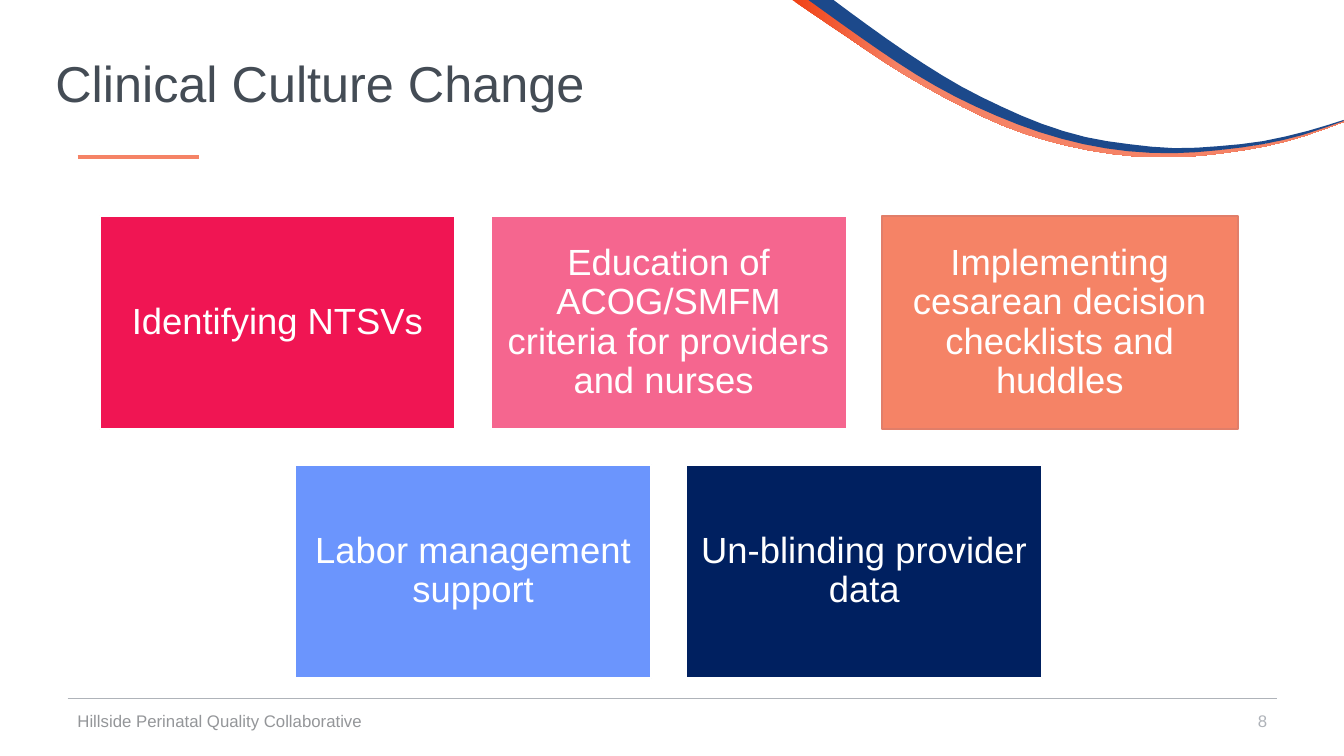
import pptx
import pptx.dml.color
import pptx.enum.shapes
import pptx.enum.text
import pptx.oxml
import pptx.util

Inches = pptx.util.Inches
Points = pptx.util.Pt
Align = pptx.enum.text.PP_ALIGN

COLORS = {
    "title": "444C55", "footer": "949699", "rule": "AFB3B9", "white": "FFFFFF",
    "flame": "F04115", "coral": "F58366", "coral edge": "E17E69", "blue": "1C498B",
    "crimson": "F01553", "pink": "F5668F", "sky": "6B95FD", "navy": "002060",
}
CARD_ROWS = [
    [("Identifying NTSVs", "crimson", "white"),
     ("Education of ACOG/SMFM criteria for providers and nurses ", "pink", "white"),
     ("Implementing cesarean decision checklists and huddles", "coral", "coral edge")],
    [("Labor management support", "sky", "white"),
     ("Un-blinding provider data", "navy", "white")],
]
CORAL_RIBBON = (
    [(7.86, 0), (8.41, 0.37), (8.78, 0.62), (9.16, 0.85), (9.55, 1.06), (9.96, 1.25),
     (10.37, 1.39), (10.8, 1.49), (11.24, 1.55), (11.69, 1.56), (12.13, 1.52),
     (12.56, 1.45), (12.94, 1.35), (13.33, 1.21)],
    [(13.33, 1.2), (12.99, 1.32), (12.56, 1.43), (12.12, 1.49), (11.68, 1.52),
     (11.25, 1.5), (10.81, 1.44), (10.39, 1.33), (9.58, 0.99), (8.82, 0.54), (8.05, 0)],
)
BLUE_RIBBON = (
    [(8.02, 0), (8.34, 0.23), (8.71, 0.49), (9.09, 0.74), (9.48, 0.96), (9.89, 1.15),
     (10.31, 1.31), (10.75, 1.43), (11.19, 1.5), (11.64, 1.52), (12.09, 1.49),
     (12.53, 1.43), (12.92, 1.34), (13.33, 1.2)],
    [(13.33, 1.19), (12.97, 1.3), (12.53, 1.4), (12.09, 1.45), (11.65, 1.47),
     (11.2, 1.43), (10.77, 1.36), (10.34, 1.23), (9.94, 1.06), (9.54, 0.86),
     (9.16, 0.63), (8.79, 0.38), (8.43, 0.12), (8.27, 0)],
)


def color(name):
    """Return the named colour."""
    return pptx.dml.color.RGBColor.from_string(COLORS[name])


def write_text(shape, text, size, ink, align=Align.LEFT, spacing=1.0, margin=0.1):
    """Write one vertically centred paragraph into a shape."""
    frame = shape.text_frame
    frame.word_wrap = True
    frame.vertical_anchor = pptx.enum.text.MSO_ANCHOR.MIDDLE
    frame.margin_left = frame.margin_right = Inches(margin)
    para = frame.paragraphs[0]
    para.alignment = align
    para.line_spacing = spacing
    span = para.add_run()
    span.text = text
    span.font.name = "Arial"
    span.font.size = Points(size)
    span.font.color.rgb = color(ink)


def add_label(page, box, text, size, ink, **text_format):
    """Add a text box filling the given box."""
    label = page.shapes.add_textbox(*map(Inches, box))
    write_text(label, text, size, ink, **text_format)


def add_rule(page, left, top, width, ink, weight):
    """Draw a horizontal rule."""
    rule = page.shapes.add_connector(
        pptx.enum.shapes.MSO_CONNECTOR.STRAIGHT,
        Inches(left), Inches(top), Inches(left + width), Inches(top))
    rule.line.color.rgb = color(ink)
    rule.line.width = Points(weight)
    rule._element.spPr.append(pptx.oxml.parse_xml(
        '<a:effectLst xmlns:a="http://schemas.openxmlformats.org/drawingml/2006/main"/>'))


def smooth_curve(knots, steps=2):
    """Return points on a smooth curve through the knots."""
    padded = [knots[0], *knots, knots[-1]]
    points = []
    for before, start, end, after in zip(padded, padded[1:], padded[2:], padded[3:]):
        for step in range(steps):
            t = step / steps
            points.append(tuple(
                b + ((c - a) * t + (2 * a - 5 * b + 4 * c - d) * t ** 2
                     + (3 * b - a - 3 * c + d) * t ** 3) / 2
                for a, b, c, d in zip(before, start, end, after)))
    return points + [knots[-1]]


def add_ribbon(page, edges):
    """Draw a ribbon between its lower and upper edges."""
    points = [(Inches(x), Inches(y)) for edge in edges for x, y in smooth_curve(edge)]
    builder = page.shapes.build_freeform(*points[0])
    builder.add_line_segments(points[1:], close=True)
    ribbon = builder.convert_to_shape()
    ribbon.shadow.inherit = False
    ribbon.line.fill.background()
    return ribbon


def add_swoosh(page):
    """Draw the two ribbons in the top right corner."""
    fill = add_ribbon(page, CORAL_RIBBON).fill
    fill.gradient()
    fill.gradient_angle = 0
    for stop, position, name in zip(fill.gradient_stops, (0, 0.2), ("flame", "coral")):
        stop.position = position
        stop.color.rgb = color(name)
    fill = add_ribbon(page, BLUE_RIBBON).fill
    fill.solid()
    fill.fore_color.rgb = color("blue")


def add_card(page, box, text, fill, edge):
    """Add one coloured card."""
    card = page.shapes.add_shape(
        pptx.enum.shapes.MSO_SHAPE.RECTANGLE, *map(Inches, box))
    card.shadow.inherit = False
    card.fill.solid()
    card.fill.fore_color.rgb = color(fill)
    card.line.color.rgb = color(edge)
    card.line.width = Points(1.5)
    write_text(card, text, 26, "white", align=Align.CENTER, spacing=0.9, margin=0.11)


def add_cards(page, box, gap=0.35):
    """Lay out centred rows of equal cards in the box."""
    left, top, width, height = box
    columns = max(map(len, CARD_ROWS))
    card_width = (width - gap * (columns - 1)) / columns
    card_height = (height - gap * (len(CARD_ROWS) - 1)) / len(CARD_ROWS)
    for row, cards in enumerate(CARD_ROWS):
        indent = (columns - len(cards)) * (card_width + gap) / 2
        for column, card in enumerate(cards):
            add_card(page, (left + indent + column * (card_width + gap),
                            top + row * (card_height + gap),
                            card_width, card_height), *card)


def add_header(page, box):
    """Add the title and the short accent rule under it."""
    left, top, width, height = box
    add_label(page, box, "Clinical Culture Change", 36, "title", spacing=0.9)
    add_rule(page, left + 0.32, top + height - 0.02, 1.2, "coral", 2.5)


def add_footer(page, box):
    """Add the footer rule, the group name and the page number."""
    left, top, width, height = box
    add_rule(page, left, top - 0.02, width, "rule", 0.5)
    add_label(page, (left, top, 4.5, height),
              "Hillside Perinatal Quality Collaborative", 12, "footer")
    add_label(page, (left + width - 3, top, 3, height), "8", 12, "rule", align=Align.RIGHT)


def main():
    """Build the slide and save the deck."""
    deck = pptx.Presentation()
    deck.slide_width, deck.slide_height = Inches(40 / 3), Inches(7.5)
    page = deck.slides.add_slide(deck.slide_layouts[6])
    add_swoosh(page)
    add_header(page, (0.45, 0.13, 8.12, 1.45))
    add_cards(page, (0.99, 2.14, 11.29, 4.59))
    add_footer(page, (0.67, 6.95, 12, 0.4))
    deck.save("out.pptx")


if __name__ == "__main__":
    main()
